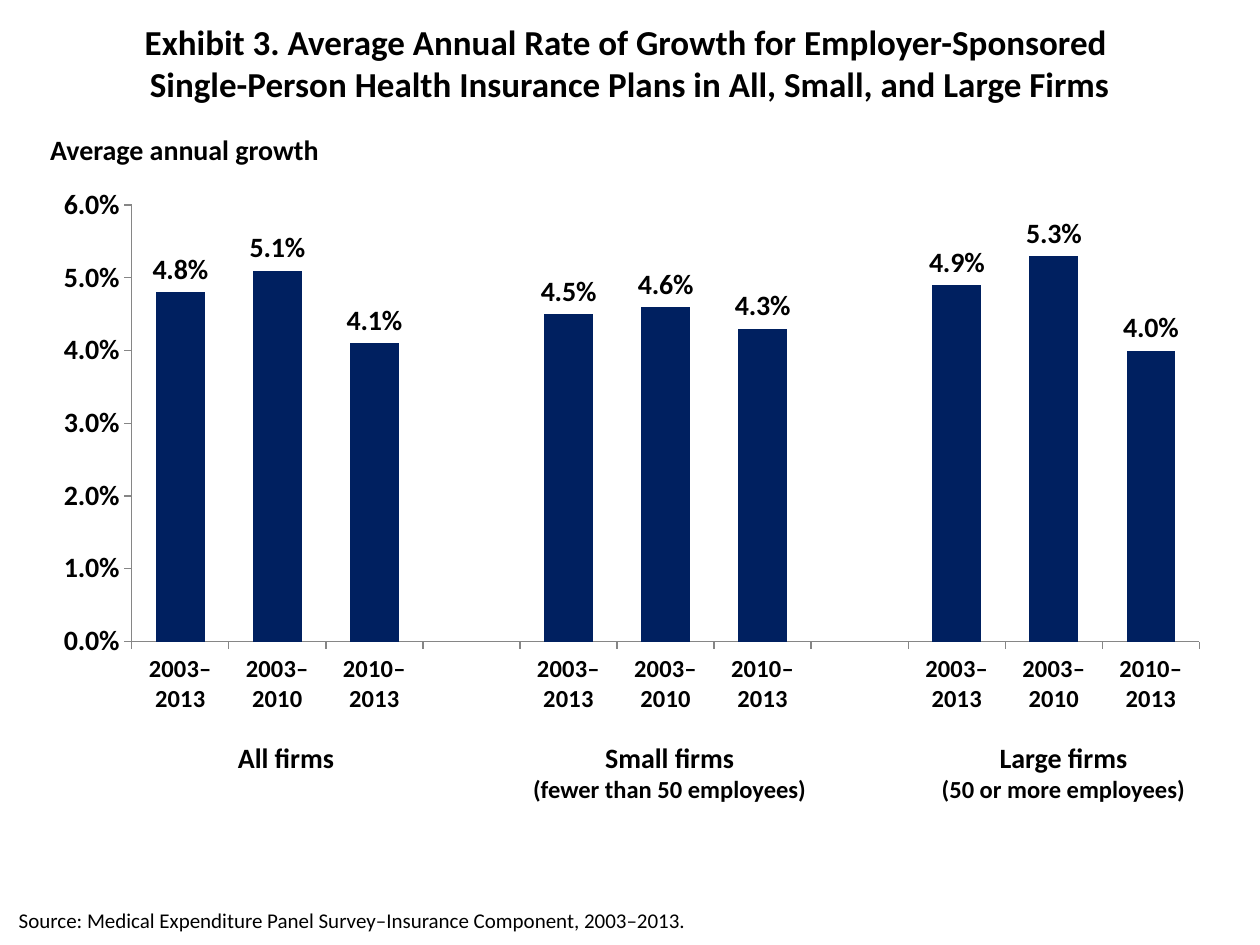
from lxml import etree
from pptx import Presentation
from pptx.chart.data import CategoryChartData
from pptx.dml.color import RGBColor
from pptx.enum.chart import XL_CHART_TYPE, XL_LABEL_POSITION, XL_TICK_MARK
from pptx.enum.text import MSO_ANCHOR, PP_ALIGN
from pptx.util import Inches, Pt

COLUMN = XL_CHART_TYPE.COLUMN_CLUSTERED
ABOVE = XL_LABEL_POSITION.OUTSIDE_END
OUT, NONE = XL_TICK_MARK.OUTSIDE, XL_TICK_MARK.NONE
LEFT, CENTER = PP_ALIGN.LEFT, PP_ALIGN.CENTER
TOP, MIDDLE = MSO_ANCHOR.TOP, MSO_ANCHOR.MIDDLE
COLORS = {"text": "000000", "bar": "002060", "axis": "868686"}
PERCENT = "0.0%"
SPANS = ["2003–\n2013", "2003–\n2010", "2010–\n2013"]
RATES = [[0.048, 0.051, 0.041], [0.045, 0.046, 0.043], [0.049, 0.053, 0.04]]
GROUPS = [
    (1.04, 2.46, [("All firms", 16)]),
    (3.96, 2.71, [("Small firms", 16), ("(fewer than 50 employees)", 14)]),
    (7.17, 2.54, [("Large firms", 16), ("(50 or more employees)", 14)]),
]


def color(name):
    """Return the named colour."""
    return RGBColor.from_string(COLORS[name])


def style(font, size, bold=True, face="Calibri"):
    """Set the face, size, weight and colour of a font."""
    font.name, font.size, font.bold = face, Pt(size), bold
    font.color.rgb = color("text")


def add_text(slide, box, lines, align=LEFT, anchor=TOP, bold=True):
    """Add a text box with one paragraph for each (text, size) pair."""
    frame = slide.shapes.add_textbox(*map(Inches, box)).text_frame
    frame.word_wrap, frame.vertical_anchor = True, anchor
    for i, (text, size) in enumerate(lines):
        para = frame.add_paragraph() if i else frame.paragraphs[0]
        para.text, para.alignment = text, align
        for run in para.runs:
            style(run.font, size, bold)


def set_axis(axis, size):
    """Give an axis outside ticks, a grey line and bold labels."""
    axis.has_major_gridlines = False
    axis.major_tick_mark, axis.minor_tick_mark = OUT, NONE
    axis.format.line.color.rgb = color("axis")
    axis.format.line.width = Pt(0.75)
    style(axis.tick_labels.font, size)


def set_plot(chart, **area):
    """Fix the inner plot area as fractions of the chart."""
    plot = chart.plots[0]._element.getparent()
    ns = etree.QName(plot).namespace
    for old in plot.findall(f"{{{ns}}}layout"):
        plot.remove(old)
    layout = etree.Element(f"{{{ns}}}layout")
    manual = etree.SubElement(layout, f"{{{ns}}}manualLayout")
    parts = {"layoutTarget": "inner", "xMode": "edge", "yMode": "edge", **area}
    for tag, val in parts.items():
        etree.SubElement(manual, f"{{{ns}}}{tag}", val=str(val))
    plot.insert(0, layout)


def add_chart(slide, box):
    """Add the column chart, with an empty slot between firm groups."""
    cats, vals = [], []
    for rates in RATES:
        if cats:
            cats.append("")
            vals.append(None)
        cats += SPANS
        vals += rates
    data = CategoryChartData(number_format=PERCENT)
    data.categories = cats
    data.add_series("Series 1", vals)
    chart = slide.shapes.add_chart(COLUMN, *map(Inches, box), data).chart
    chart.has_title = chart.has_legend = False
    style(chart.font, 18, False, "Arial")
    set_plot(chart, x=0.088, y=0.137, w=0.892, h=0.67)
    set_axis(chart.category_axis, 14)
    axis = chart.value_axis
    set_axis(axis, 16)
    axis.minimum_scale, axis.maximum_scale, axis.major_unit = 0, 0.06, 0.01
    axis.tick_labels.number_format = PERCENT
    axis.tick_labels.number_format_is_linked = False
    plot = chart.plots[0]
    plot.gap_width, plot.vary_by_categories = 100, False
    fill = plot.series[0].format.fill
    fill.solid()
    fill.fore_color.rgb = color("bar")
    labels = plot.series[0].data_labels
    labels.show_value, labels.position = True, ABOVE
    labels.number_format, labels.number_format_is_linked = PERCENT, False
    style(labels.font, 16)


def main():
    """Build and save the slide."""
    deck = Presentation()
    deck.slide_width, deck.slide_height = Inches(10), Inches(7.5)
    slide = deck.slides.add_slide(deck.slide_layouts[6])
    title = ("Exhibit 3. Average Annual Rate of Growth for Employer-Sponsored \n"
             "Single-Person Health Insurance Plans in All, Small, and Large Firms")
    add_text(slide, (0, 0.1, 10, 0.8), [(title, 20)], align=CENTER, anchor=MIDDLE)
    add_chart(slide, (0.21, 0.92, 9.5, 5.17))
    add_text(slide, (0.3, 1, 3.08, 0.37), [("Average annual growth", 16)])
    for left, width, lines in GROUPS:
        height = 0.37 if len(lines) == 1 else 0.61
        add_text(slide, (left, 5.83, width, height), lines, align=CENTER)
    source = "Source: Medical Expenditure Panel Survey–Insurance Component, 2003–2013."
    add_text(slide, (0.05, 7.15, 5.75, 0.3), [(source, 12)], bold=False)
    deck.save("out.pptx")


if __name__ == "__main__":
    main()
